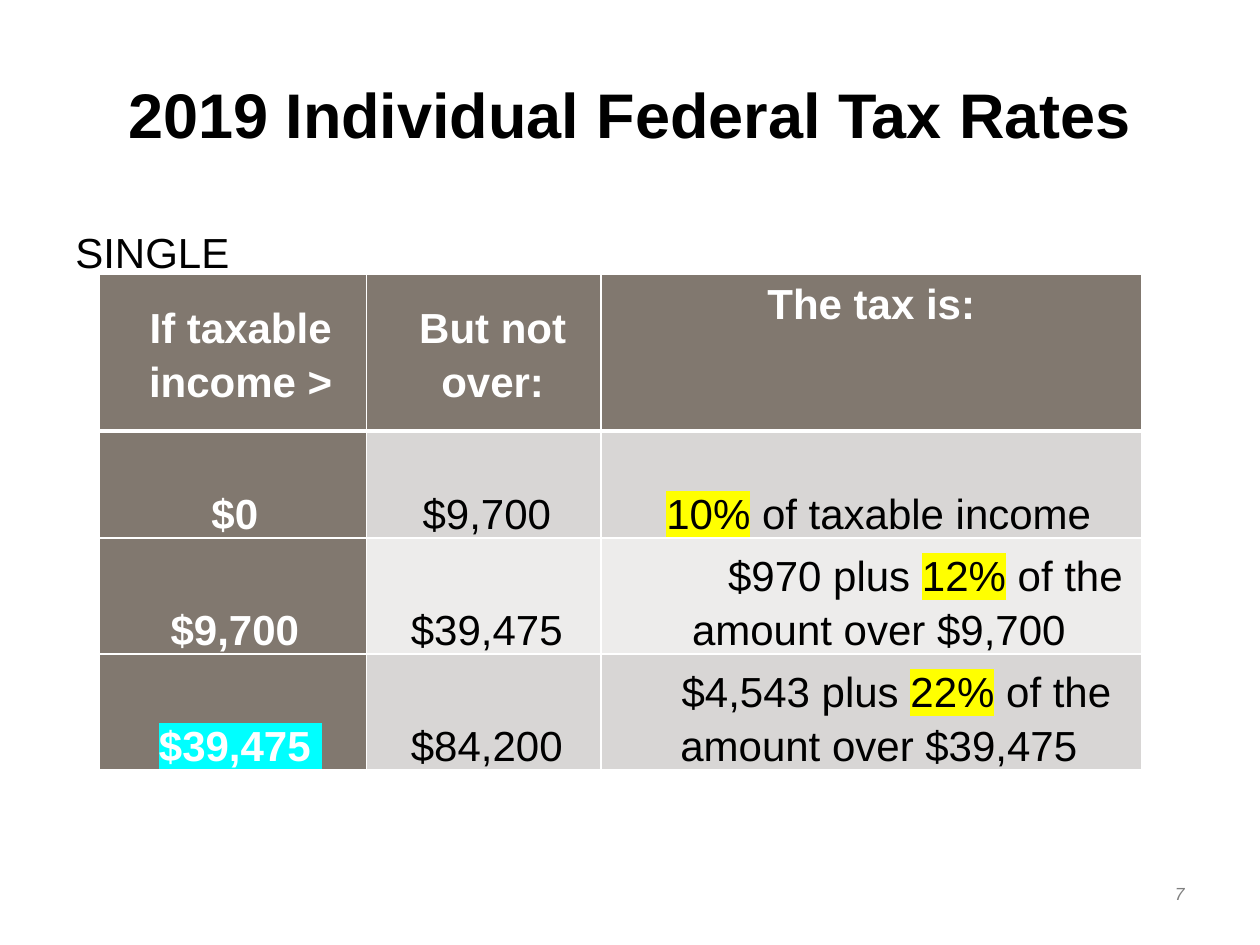
import pptx
import pptx.dml.color
import pptx.enum.text
import pptx.oxml
import pptx.oxml.ns
import pptx.util
from pptx.util import Inches

COLORS = {"text": "000000", "white": "FFFFFF", "gray": "7F7F7F",
          "brown": "81786F", "dark_band": "D8D6D5", "light_band": "EDECEB",
          "yellow": "FFFF00", "cyan": "00FFFF"}
ALIGN = pptx.enum.text.PP_ALIGN
ANCHOR = pptx.enum.text.MSO_ANCHOR

TITLE = "2019 Individual Federal Tax Rates"
FILING_STATUS = "SINGLE"
PAGE = "7"
HEADERS = ["If taxable income >", "But not over:", "The tax is:"]
# Lower limit, its highlight, upper limit, tax as (text, highlight) runs, first-line indent
BRACKETS = [
    ("$0 ", None, "$9,700 ",
     [("10%", "yellow"), (" of taxable income", None)], 0),
    ("$9,700 ", None, "$39,475 ",
     [("$970 plus ", None), ("12%", "yellow"), (" of the amount over $9,700", None)], 0.74),
    ("$39,475 ", "cyan", "$84,200 ",
     [("$4,543 plus ", None), ("22%", "yellow"), (" of the amount over $39,475", None)], 0.28),
]
COL_WIDTHS = [2.12, 1.86, 4.29]
ROW_HEIGHTS = [1.24, 0.85, 0.85, 0.85]
COL_INDENTS = [0.12, 0.14, 0.12]


def rgb(name):
    return pptx.dml.color.RGBColor.from_string(COLORS[name])


def write(tf, text, size=24, color="text", bold=False, italic=False,
          align=ALIGN.LEFT, spacing=None, left=0, first=0):
    """Fill the first paragraph; text is a string or a list of (text, highlight)."""
    tf.word_wrap = True
    p = tf.paragraphs[0]
    p.alignment = align
    p.line_spacing = spacing
    if left or first:
        pPr = p._p.get_or_add_pPr()
        pPr.set("marL", str(Inches(left)))
        pPr.set("indent", str(Inches(first)))
    for part, highlight in [(text, None)] if isinstance(text, str) else text:
        r = p.add_run()
        r.text = part
        r.font.size = pptx.util.Pt(size)
        r.font.bold = bold
        r.font.italic = italic
        r.font.color.rgb = rgb(color)
        r.font.name = "Arial"
        if highlight:
            fill = r._r.rPr.find(pptx.oxml.ns.qn("a:solidFill"))
            fill.addnext(pptx.oxml.parse_xml(
                f'<a:highlight {pptx.oxml.ns.nsdecls("a")}>'
                f'<a:srgbClr val="{COLORS[highlight]}"/></a:highlight>'))


def add_text(s, text, box, anchor=ANCHOR.MIDDLE, **fmt):
    tf = s.shapes.add_textbox(*map(Inches, box)).text_frame
    write(tf, text, **fmt)
    tf.vertical_anchor = anchor
    return tf


def set_borders(cell, **widths):
    tcPr = cell._tc.get_or_add_tcPr()
    for i, side in enumerate("LRTB"):
        width = pptx.util.Pt(widths.get(side, 1))
        tcPr.insert(i, pptx.oxml.parse_xml(
            f'<a:ln{side} {pptx.oxml.ns.nsdecls("a")} w="{width}"><a:solidFill>'
            f'<a:srgbClr val="{COLORS["white"]}"/></a:solidFill></a:ln{side}>'))


def fill_cell(cell, text, fill, anchor, **fmt):
    cell.margin_left = cell.margin_right = Inches(0.07)
    cell.margin_top = cell.margin_bottom = 0
    cell.vertical_anchor = anchor
    cell.fill.solid()
    cell.fill.fore_color.rgb = rgb(fill)
    write(cell.text_frame, text, align=ALIGN.CENTER, spacing=1.15, **fmt)


def add_tax_table(s):
    table = s.shapes.add_table(
        len(ROW_HEIGHTS), len(COL_WIDTHS), Inches(0.79), Inches(2.18),
        Inches(sum(COL_WIDTHS)), Inches(sum(ROW_HEIGHTS))).table
    for col, width in zip(table.columns, COL_WIDTHS):
        col.width = Inches(width)
    for row, height in zip(table.rows, ROW_HEIGHTS):
        row.height = Inches(height)

    for c, header in enumerate(HEADERS):
        last = c == len(HEADERS) - 1
        cell = table.cell(0, c)
        fill_cell(cell, header, "brown", ANCHOR.TOP if last else ANCHOR.MIDDLE,
                  color="white", bold=True, left=0 if last else COL_INDENTS[c])
        set_borders(cell, B=3)

    for r, (lower, highlight, upper, tax, first) in enumerate(BRACKETS, 1):
        band = "dark_band" if r % 2 else "light_band"
        for c, text in enumerate([[(lower, highlight)], upper, tax]):
            cell = table.cell(r, c)
            fill_cell(cell, text, "brown" if c == 0 else band, ANCHOR.BOTTOM,
                      color="white" if c == 0 else "text", bold=c == 0,
                      left=COL_INDENTS[c], first=first if c == 2 else 0)
            set_borders(cell, T=3 if r == 1 else 1)


def main():
    prs = pptx.Presentation()
    prs.slide_width, prs.slide_height = Inches(10), Inches(7.5)
    s = prs.slides.add_slide(prs.slide_layouts[6])
    add_text(s, TITLE, (0.5, 0.3, 9, 1.19), size=36, bold=True, align=ALIGN.CENTER)
    status = add_text(s, FILING_STATUS, (0.5, 1.71, 9, 4.68), anchor=ANCHOR.TOP)
    status.margin_top = Inches(0.09)
    add_text(s, PAGE, (8.22, 6.89, 1.28, 0.4), size=10, color="gray",
             italic=True, align=ALIGN.RIGHT)
    add_tax_table(s)
    prs.save("out.pptx")


if __name__ == "__main__":
    main()
